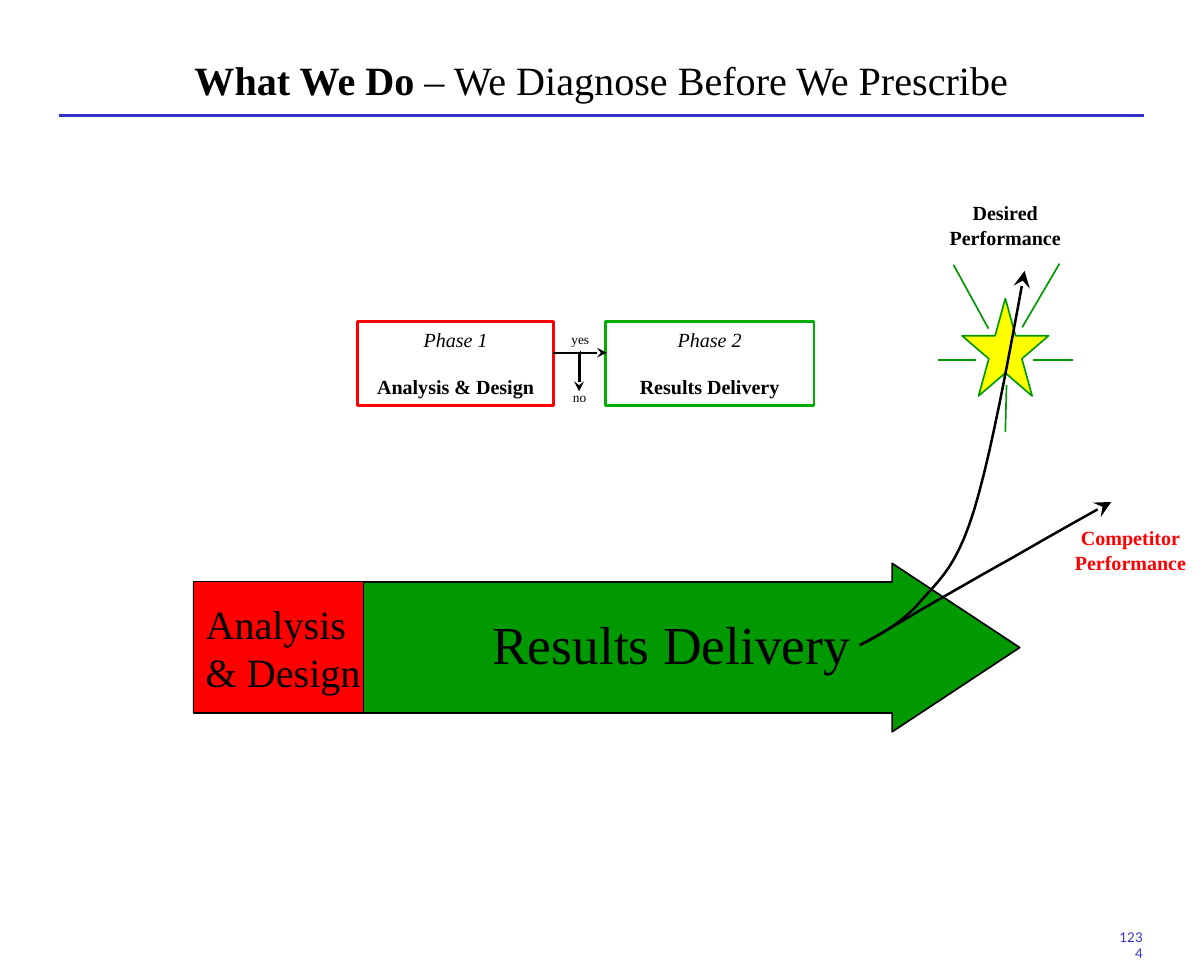
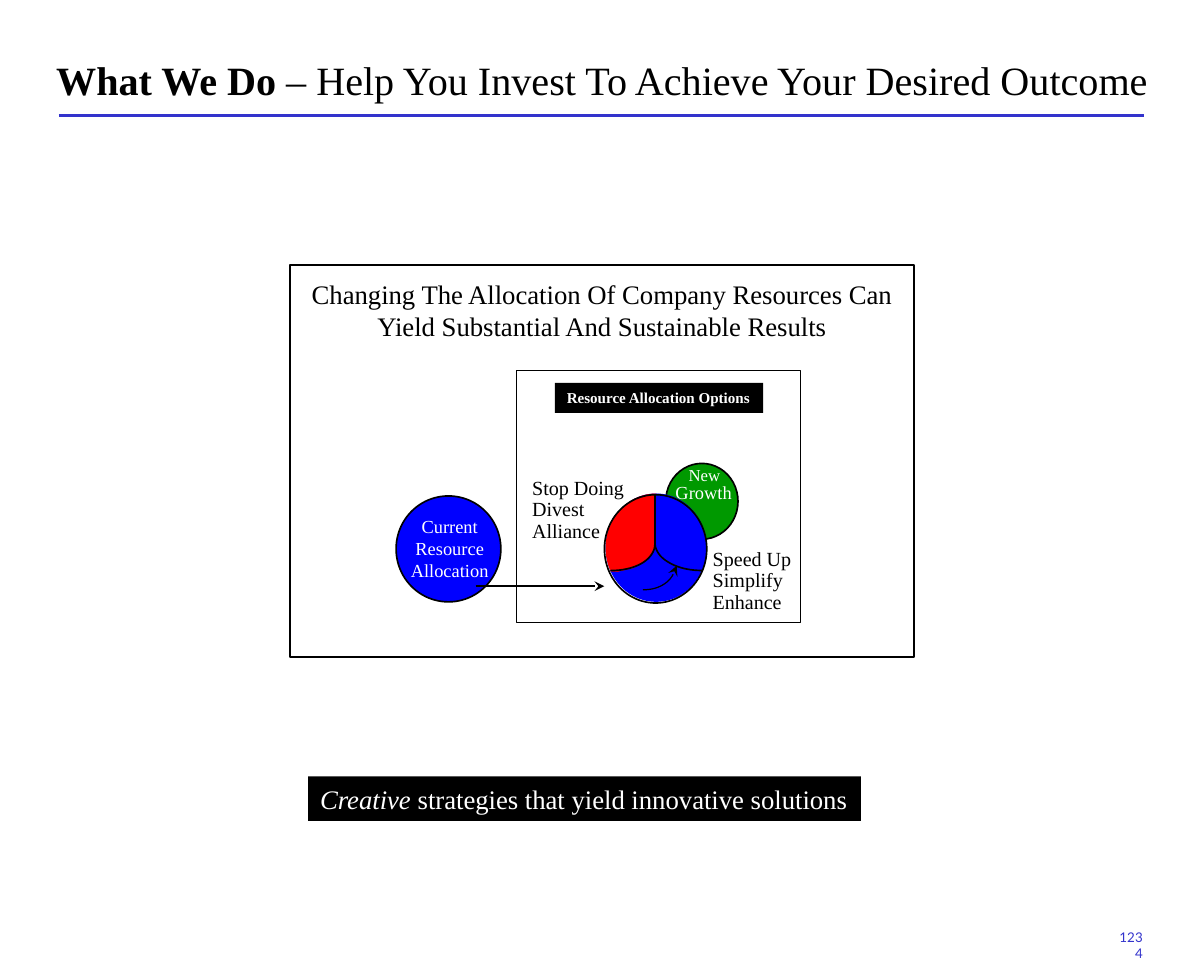
from math import cos, radians, sin

from lxml import etree
from pptx import Presentation
from pptx.dml.color import RGBColor
from pptx.enum import shapes, text
from pptx.oxml import ns
from pptx.util import Inches, Pt

BLACK, WHITE, RED, GREEN = "000000", "FFFFFF", "FF0000", "009900"
BLUE, YELLOW, RULE, PHASE_GREEN = "0000FF", "FFFF00", "3333CC", "00AE00"
SERIF, SANS = "Times New Roman", "Lato"
LEFT, CENTER, RIGHT = text.PP_ALIGN.LEFT, text.PP_ALIGN.CENTER, text.PP_ALIGN.RIGHT
KIND, STRAIGHT = shapes.MSO_SHAPE, shapes.MSO_CONNECTOR.STRAIGHT
MEDIUM, LARGE = "med", "lg"
rgb = RGBColor.from_string


def paint(shape, fill=None, line=None, width=1, arrow=None):
    """Set fill, outline and end arrowhead size, and remove the theme shadow."""
    if hasattr(shape, "fill"):
        shape.shadow.inherit = False
        if fill:
            shape.fill.solid()
            shape.fill.fore_color.rgb = rgb(fill)
        else:
            shape.fill.background()
    else:
        etree.SubElement(shape._element.spPr, ns.qn("a:effectLst"))
    if line:
        shape.line.color.rgb = rgb(line)
        shape.line.width = Pt(width)
    else:
        shape.line.fill.background()
    if arrow:
        etree.SubElement(shape.line._get_or_add_ln(), ns.qn("a:tailEnd"),
                         type="stealth", w=arrow, len=arrow)
    return shape


def write(shape, paragraphs, size, colour=BLACK, font=SERIF, margins=(0.1, 0.05),
          frame_format=None, paragraph_format=None):
    """Fill a shape with paragraphs, each a list of (text, font attributes) runs."""
    frame = shape.text_frame
    side, edge = (Inches(margin) for margin in margins)
    frame_values = {"word_wrap": False, "auto_size": text.MSO_AUTO_SIZE.SHAPE_TO_FIT_TEXT,
                    "vertical_anchor": text.MSO_ANCHOR.TOP,
                    "margin_left": side, "margin_right": side,
                    "margin_top": edge, "margin_bottom": edge}
    for name, value in (frame_values | (frame_format or {})).items():
        setattr(frame, name, value)
    for index, runs in enumerate(paragraphs):
        paragraph = frame.paragraphs[0] if index == 0 else frame.add_paragraph()
        for name, value in ({"alignment": LEFT} | (paragraph_format or {})).items():
            setattr(paragraph, name, value)
        for words, emphasis in runs:
            run = paragraph.add_run()
            run.text = words
            run.font.color.rgb = rgb(colour)
            for name, value in ({"name": font, "size": Pt(size)} | emphasis).items():
                setattr(run.font, name, value)


presentation = Presentation()
presentation.slide_width, presentation.slide_height = Inches(10), Inches(8)

# Shared frame: title, rule and page number
titles = [
    (" – We Diagnose Before We Prescribe", 0.38, 9.23),
    (" – Help You Invest To Achieve Your Desired Outcome", 0, 10),
]
for title, left, width in titles:
    slide = presentation.slides.add_slide(presentation.slide_layouts[6])
    rule = slide.shapes.add_connector(STRAIGHT, Inches(0.49), Inches(0.96), Inches(9.5), Inches(0.96))
    paint(rule, line=RULE, width=1.5)
    number = slide.shapes.add_textbox(Inches(9.14), Inches(7.67), Inches(0.45), Inches(0.24))
    write(number, [[("1234", {})]], 8, RULE, SANS,
          frame_format={"word_wrap": True}, paragraph_format={"alignment": RIGHT})
    heading = slide.shapes.add_textbox(Inches(left), Inches(0.35), Inches(width), Inches(0.62))
    write(heading, [[("What We Do", {"bold": True}), (title, {})]], 24,
          frame_format={"word_wrap": True, "auto_size": text.MSO_AUTO_SIZE.NONE,
                        "vertical_anchor": text.MSO_ANCHOR.MIDDLE},
          paragraph_format={"alignment": CENTER})
diagnose, invest = presentation.slides

# Phases
phases = [
    ("Phase 1", "Analysis & Design", 2.97, 1.63, RED),
    ("Phase 2", "Results Delivery", 5.03, 1.73, PHASE_GREEN),
]
for phase, content, left, width, colour in phases:
    box = diagnose.shapes.add_shape(
        KIND.RECTANGLE, Inches(left), Inches(2.67), Inches(width), Inches(0.7))
    paint(box, line=colour, width=1.5)
    write(box, [[(phase, {"italic": True})], [(content, {"bold": True})]], 12,
          frame_format={"word_wrap": True}, paragraph_format={"alignment": CENTER})
    box.text_frame.paragraphs[1].space_before = Pt(13.8)

# Solid shapes: slide, kind, place, fill, line, line width
solids = [
    (diagnose, KIND.STAR_5_POINT, (7.99, 2.48, 0.72, 0.81), YELLOW, GREEN, 1),
    (diagnose, KIND.RIGHT_ARROW, (1.61, 4.68, 6.86, 1.4), GREEN, BLACK, 1),
    (diagnose, KIND.RECTANGLE, (1.61, 4.83, 1.41, 1.09), RED, BLACK, 0.75),
    (invest, KIND.RECTANGLE, (2.41, 2.2, 5.18, 3.26), None, BLACK, 1),
    (invest, KIND.RECTANGLE, (4.29, 3.08, 2.36, 2.09), None, BLACK, 0.75),
    (invest, KIND.OVAL, (3.29, 4.12, 0.87, 0.88), BLUE, BLACK, 1),
    (invest, KIND.OVAL, (5.53, 3.85, 0.6, 0.63), GREEN, BLACK, 1),
    (invest, KIND.OVAL, (5.03, 4.1, 0.84, 0.9), BLUE, None, 1),
]
for slide, kind, place, fill, line, width in solids:
    solid = paint(slide.shapes.add_shape(kind, *map(Inches, place)), fill, line, width)
    if kind == KIND.RIGHT_ARROW:
        solid.adjustments[0], solid.adjustments[1] = 0.777, 0.757

# Red sector of the resource circle, then the circle's outline
sector = [(5.44, 4.54), (5.41, 4.6), (5.36, 4.66), (5.26, 4.72), (5.13, 4.75)]
sector += [(5.45 + 0.42 * cos(radians(angle)), 4.55 + 0.45 * sin(radians(angle)))
           for angle in range(154, 271, 4)]
builder = invest.shapes.build_freeform(Inches(5.44), Inches(4.11))
builder.add_line_segments([(Inches(x), Inches(y)) for x, y in sector])
paint(builder.convert_to_shape(), RED)
outline = invest.shapes.add_shape(KIND.OVAL, *map(Inches, (5.02, 4.11, 0.85, 0.9)))
paint(outline, line=BLACK)

# Straight lines: slide, ends, colour, width, arrowhead
lines = [
    (diagnose, (4.59, 2.93, 5.04, 2.93), BLACK, 1, MEDIUM),
    (diagnose, (4.81, 2.94, 4.81, 3.25), BLACK, 1, MEDIUM),
    (diagnose, (4.82, 3.17, 4.82, 2.92), BLACK, 0.75, None),
    (diagnose, (4.6, 2.93, 4.92, 2.93), BLACK, 0.75, None),
    (diagnose, (8.49, 2.72, 8.8, 2.19), GREEN, 1, None),
    (diagnose, (8.21, 2.73, 7.92, 2.2), GREEN, 1, None),
    (diagnose, (8.35, 3.59, 8.36, 3.2), GREEN, 1, None),
    (diagnose, (8.58, 2.99, 8.91, 2.99), GREEN, 1, None),
    (diagnose, (7.79, 2.99, 8.11, 2.99), GREEN, 1, None),
    (invest, (5.44, 4.11, 5.44, 4.53), BLACK, 1, None),
    (invest, (3.95, 4.87, 5.02, 4.87), BLACK, 1, MEDIUM),
]
for slide, ends, colour, width, arrow in lines:
    connector = slide.shapes.add_connector(STRAIGHT, *map(Inches, ends))
    paint(connector, line=colour, width=width, arrow=arrow)

# Curves: slide, Bézier points (each segment starts where the last one ends), width, arrowhead
curves = [
    (diagnose, [(7.14, 5.36), (7.32, 5.27), (7.5, 5.17), (7.66, 4.98), (7.82, 4.8), (7.95, 4.69),
                (8.09, 4.24), (8.23, 3.78), (8.37, 3.02), (8.51, 2.25)], 1.5, LARGE),
    (diagnose, [(7.16, 5.35), (7.31, 5.27), (7.46, 5.18), (7.66, 5.06), (7.87, 4.94), (8.18, 4.76),
                (8.38, 4.65), (8.59, 4.53), (8.9, 4.35), (9.23, 4.17)], 1.5, LARGE),
    (invest, [(5.83, 4.74), (5.73, 4.74), (5.63, 4.72), (5.55, 4.67),
              (5.48, 4.63), (5.44, 4.57), (5.44, 4.51)], 1, None),
    (invest, [(5.44, 4.52), (5.44, 4.58), (5.4, 4.64), (5.33, 4.68),
              (5.26, 4.72), (5.17, 4.74), (5.07, 4.74)], 1, None),
    (invest, [(5.34, 4.9), (5.4, 4.9), (5.46, 4.89), (5.52, 4.85),
              (5.58, 4.81), (5.6, 4.76), (5.62, 4.7)], 0.75, MEDIUM),
]
STEPS = 10
for slide, points, width, arrow in curves:
    trace = []
    for first in range(0, len(points) - 1, 3):
        for step in range(1, STEPS + 1):
            t = step / STEPS
            weights = ((1 - t) ** 3, 3 * t * (1 - t) ** 2, 3 * t ** 2 * (1 - t), t ** 3)
            segment = list(zip(weights, points[first:first + 4]))
            trace.append(tuple(Inches(sum(weight * point[axis] for weight, point in segment))
                               for axis in (0, 1)))
    builder = slide.shapes.build_freeform(*map(Inches, points[0]))
    builder.add_line_segments(trace, close=False)
    paint(builder.convert_to_shape(), line=BLACK, width=width, arrow=arrow)

# Labels: slide, place, lines, size, colour, alignment, bold
labels = [
    (diagnose, (4.53, 3.18, 0.57, 0.23), ["no"], 8, BLACK, CENTER, False),
    (diagnose, (4.44, 2.7, 0.76, 0.23), ["yes"], 8, BLACK, CENTER, False),
    (diagnose, (3.99, 5.03, 3.22, 0.64), ["Results Delivery"], 32, BLACK, LEFT, False),
    (diagnose, (1.61, 4.93, 1.56, 0.9), ["Analysis", "& Design"], 24, BLACK, LEFT, False),
    (diagnose, (7.75, 1.62, 1.2, 0.5), ["Desired", "Performance"], 12, BLACK, CENTER, True),
    (diagnose, (8.79, 4.32, 1.2, 0.5), ["Competitor", "Performance"], 12, RED, CENTER, True),
    (invest, (2.48, 2.26, 5.04, 0.64),
     ["Changing The Allocation Of Company Resources Can",
      "Yield Substantial And Sustainable Results"], 16, BLACK, CENTER, False),
]
for slide, place, words, size, colour, alignment, bold in labels:
    label = slide.shapes.add_textbox(*map(Inches, place))
    write(label, [[(line, {"bold": bold})] for line in words], size, colour,
          paragraph_format={"alignment": alignment})

# Labels on and beside the circles: place, lines, size, colour, alignment, line spacing
circle_labels = [
    ((5.6, 3.8, 0.51, 0.29), ["New"], 10, WHITE, LEFT, 1.0),
    ((5.49, 3.94, 0.71, 0.31), ["Growth"], 11, WHITE, LEFT, 1.0),
    ((4.3, 3.91, 1.01, 0.66), ["Stop Doing", "Divest", "Alliance"], 12, BLACK, LEFT, 0.9),
    ((5.8, 4.5, 0.9, 0.66), ["Speed Up", "Simplify", "Enhance"], 12, BLACK, LEFT, 0.9),
    ((3.29, 4.22, 0.89, 0.67), ["Current", "Resource", "Allocation"], 11, WHITE, CENTER, 1.0),
]
for place, words, size, colour, alignment, spacing in circle_labels:
    label = invest.shapes.add_textbox(*map(Inches, place))
    write(label, [[(line, {})] for line in words], size, colour, margins=(0.12, 0.06),
          paragraph_format={"alignment": alignment, "line_spacing": spacing})

# Black banners
banners = [
    ((4.61, 3.18, 1.73, 0.25), [("Resource Allocation Options", {"bold": True})], 9),
    ((2.56, 6.45, 4.59, 0.37), [("Creative ", {"italic": True}),
                                ("strategies that yield innovative solutions", {})], 16),
]
for place, runs, size in banners:
    banner = paint(invest.shapes.add_shape(KIND.RECTANGLE, *map(Inches, place)), BLACK)
    write(banner, [runs], size, WHITE)

presentation.save("out.pptx")
